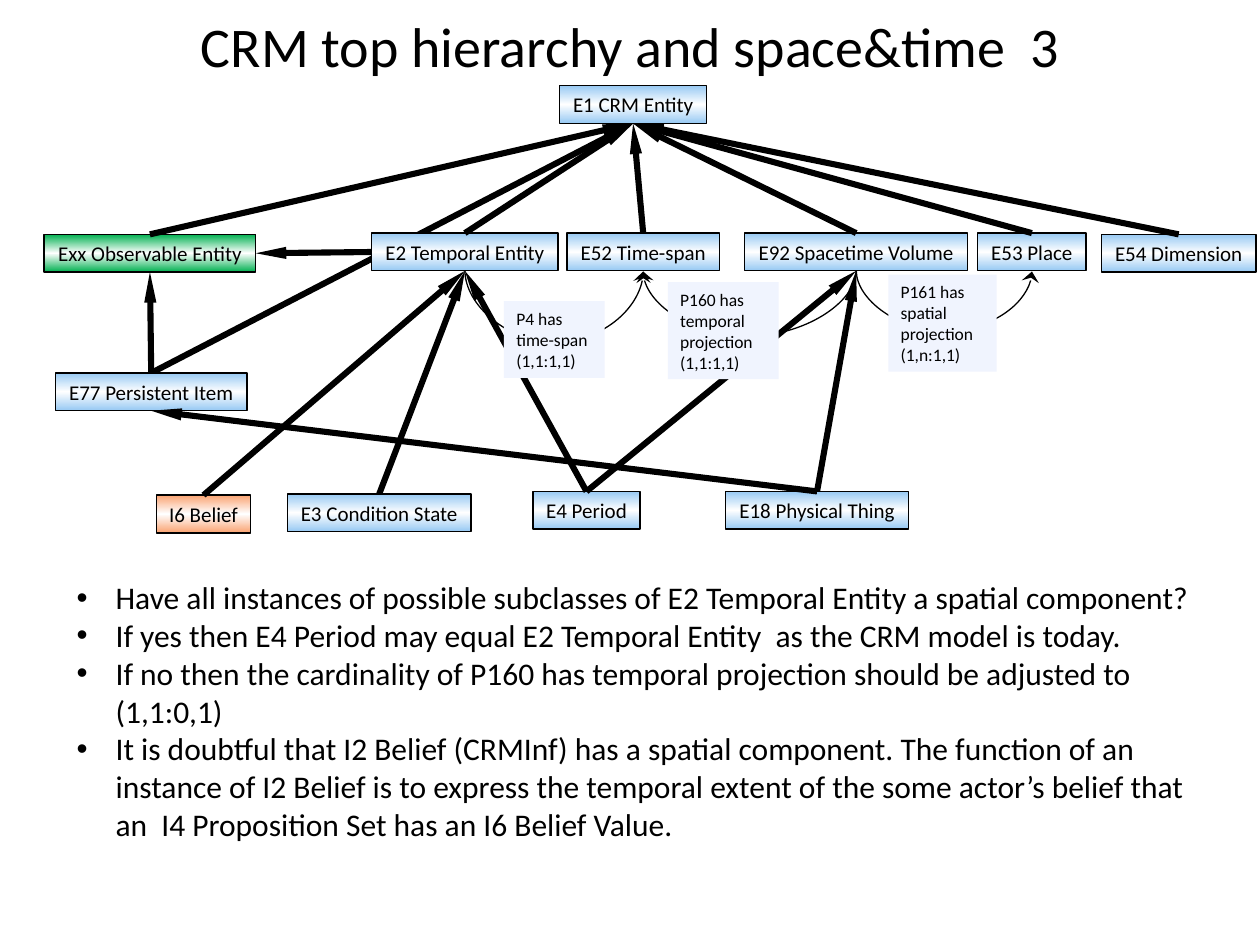
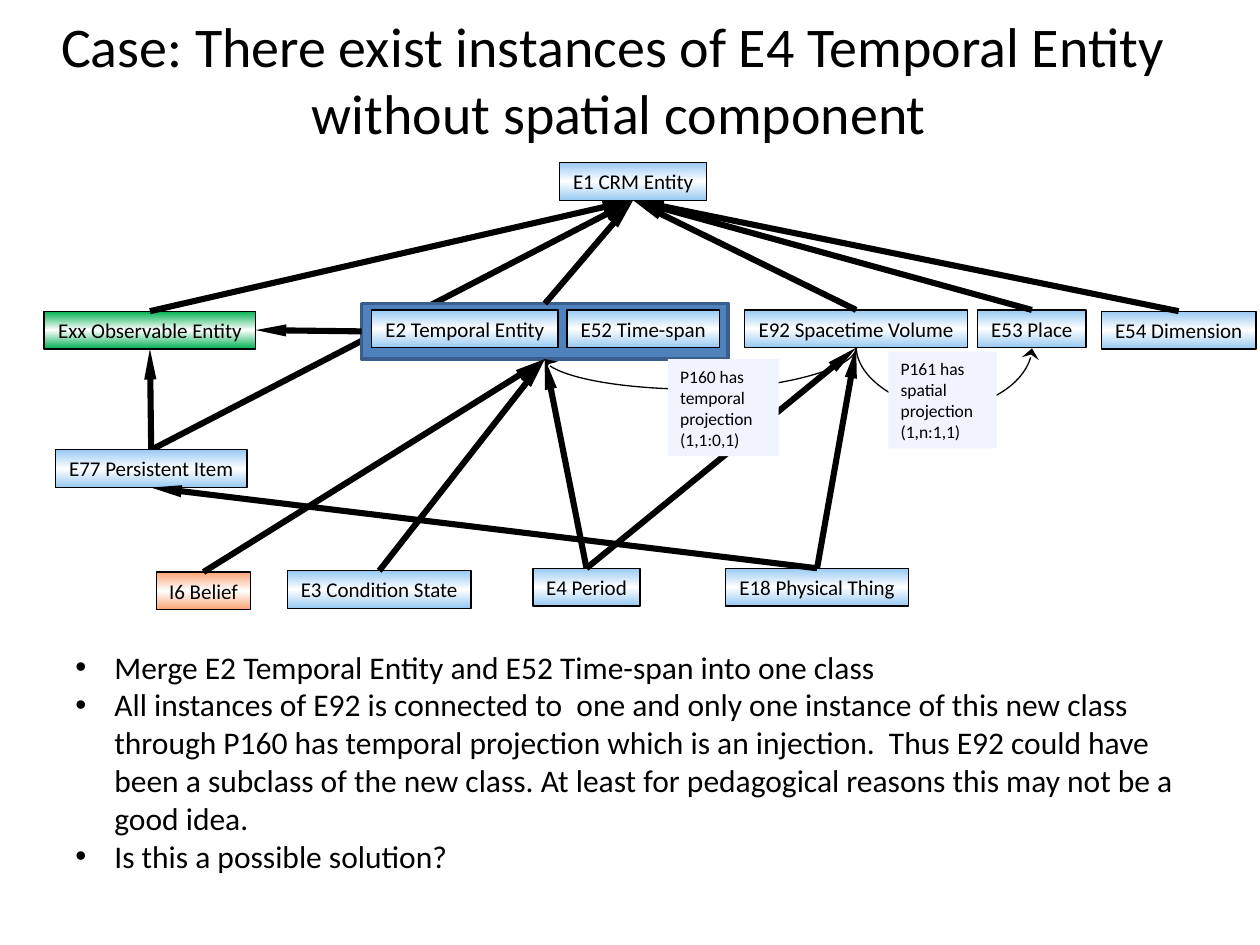
from copy import deepcopy
from dataclasses import dataclass

from pptx import Presentation
from pptx import util as u
from pptx.dml.color import RGBColor
from pptx.enum import shapes, text
from pptx.oxml.ns import qn
from lxml import etree


@dataclass(frozen=True)
class Theme:
    """Colours, font and type sizes of the deck."""
    font: str = "Calibri"
    ink: str = "000000"
    white: str = "FFFFFF"
    blue: str = "97C9F3"
    green: str = "00B050"
    orange: str = "FAA372"
    note: str = "F0F4FE"
    merged: str = "4F81BD"
    merged_edge: str = "3A5F8C"
    title: int = 32
    body: int = 18
    node: int = 12
    small: int = 10
    thin: float = 0.75
    thick: float = 3.5


T = Theme()
TOP, LEFT, BOTTOM, RIGHT = range(4)
NODE_H = 30
NODES = {
    "E54": ("E54 Dimension", 839, 118, 123, T.blue),
    "Exx": ("Exx Observable Entity", 0, 118, 168, T.green),
    "E1": ("E1 CRM Entity", 409, 0, 117, T.blue),
    "I6": ("I6 Belief", 89, 325, 75, T.orange),
    "E18": ("E18 Physical Thing", 541, 322, 145, T.blue),
    "E77": ("E77 Persistent Item", 9, 228, 152, T.blue),
    "E92": ("E92 Spacetime Volume", 556, 117, 177, T.blue),
    "E2": ("E2 Temporal Entity", 260, 117, 148, T.blue),
    "E4": ("E4 Period", 388, 322, 85, T.blue),
    "E52": ("E52 Time-span", 415, 117, 121, T.blue),
    "E53": ("E53 Place", 741, 117, 86, T.blue),
    "E3": ("E3 Condition State", 193, 324, 146, T.blue),
}
SUBCLASSES = {
    "E1": ("Exx", "E2", "E92", "E53", "E54"),
    "E2": ("I6", "E3", "E4"),
    "E92": ("E4", "E18"),
    "E77": ("E18",),
    "Exx": ("E77",),
}


def px(n):
    """Turn px, 100 to the inch, into EMU."""
    return u.Emu(n * 9144)


def rgb(hex_value):
    """Turn a hex string into a colour."""
    return RGBColor.from_string(hex_value)


def put_text(sp, lines, size=T.body, align=text.PP_ALIGN.LEFT, wrap=True,
             anchor=text.MSO_ANCHOR.TOP, bullet=False):
    """Write one paragraph per line into a shape."""
    tf = sp.text_frame
    tf.word_wrap = wrap
    tf.auto_size = text.MSO_AUTO_SIZE.SHAPE_TO_FIT_TEXT
    tf.vertical_anchor = anchor
    for i, line in enumerate(lines):
        p = tf.add_paragraph() if i else tf.paragraphs[0]
        p.alignment = align
        r = p.add_run()
        r.text = line
        r.font.name, r.font.size = T.font, u.Pt(size)
        r.font.color.rgb = rgb(T.ink)
        if bullet:
            pPr = p._p.get_or_add_pPr()
            pPr.set("marL", str(px(31)))
            pPr.set("indent", str(px(-31)))
            etree.SubElement(pPr, qn("a:buFont"), typeface="Arial")
            etree.SubElement(pPr, qn("a:buChar"), char="•")


def add_rect(s, x, y, w, h, fill, edge=None, width=T.thin):
    """Add a flat rectangle with an optional outline."""
    sp = s.shapes.add_shape(shapes.MSO_SHAPE.RECTANGLE, px(x), px(y), px(w), px(h))
    sp.shadow.inherit = False
    sp.fill.solid()
    sp.fill.fore_color.rgb = rgb(fill)
    if edge:
        sp.line.color.rgb, sp.line.width = rgb(edge), u.Pt(width)
    else:
        sp.line.fill.background()
    return sp


def add_node(s, x, y, w, label, color):
    """Add a class box shaded from its colour to white and back."""
    sp = add_rect(s, x, y, w, NODE_H, color, T.ink)
    sp.fill.gradient()
    sp.fill.gradient_angle = 90
    stops = sp._element.spPr.find(".//" + qn("a:gsLst"))
    stops.append(deepcopy(stops[0]))
    for stop, shade, place in zip(sp.fill.gradient_stops,
                                  (color, T.white, color), (0, 0.5, 1)):
        stop.color.rgb, stop.position = rgb(shade), place
    put_text(sp, [label], size=T.node, align=text.PP_ALIGN.CENTER, wrap=False)
    return sp


def add_arrow(s, kind, src, src_site, dst, dst_site, width, head):
    """Add an arrow glued to two shapes."""
    cxn = s.shapes.add_connector(kind, 0, 0, 0, 0)
    cxn.begin_connect(src, src_site)
    cxn.end_connect(dst, dst_site)
    cxn.line.color.rgb, cxn.line.width = rgb(T.ink), u.Pt(width)
    spPr = cxn._element.spPr
    style, w, length = head
    etree.SubElement(spPr.find(qn("a:ln")), qn("a:tailEnd"),
                     type=style, w=w, len=length)
    etree.SubElement(spPr, qn("a:effectLst"))
    return cxn


def add_link(s, src, dst, src_site=TOP, dst_site=BOTTOM):
    """Add a thick straight subclass arrow."""
    return add_arrow(s, shapes.MSO_CONNECTOR.STRAIGHT, src, src_site, dst, dst_site,
                     T.thick, ("triangle", "sm", "lg"))


def add_curve(s, src, dst, drop):
    """Add a thin property arrow that hangs below two boxes by drop px."""
    cxn = add_arrow(s, shapes.MSO_CONNECTOR.CURVE, src, BOTTOM, dst, BOTTOM,
                    T.thin, ("stealth", "lg", "med"))
    x1, y1, x2, y2 = cxn.begin_x, cxn.begin_y, cxn.end_x, cxn.end_y
    rise, span = max(y2 - y1, px(1)), abs(x2 - x1)
    spPr = cxn._element.spPr
    xfrm = spPr.find(qn("a:xfrm"))
    for flip in ("flipH", "flipV"):
        xfrm.attrib.pop(flip, None)
    if x2 > x1:
        xfrm.set("flipH", "1")
    xfrm.set("rot", str((270 if x2 > x1 else 90) * 60000))
    cxn.left, cxn.top = (x1 + x2 - rise) // 2, (y1 + y2 - span) // 2
    cxn.width, cxn.height = rise, span
    guides = spPr.find(qn("a:prstGeom")).find(qn("a:avLst"))
    etree.SubElement(guides, qn("a:gd"), name="adj1",
                     fmla=f"val {round(px(drop) / rise * 100000)}")


def add_note(s, x, y, w, h, lines):
    """Add a pale property label."""
    put_text(add_rect(s, x, y, w, h, T.note), lines, size=T.small,
             anchor=text.MSO_ANCHOR.MIDDLE)


def add_diagram(s, left, top, merge, cardinality):
    """Draw the class hierarchy; merge joins E2 and E52 in one box."""
    if merge:
        merged = add_rect(s, left + 252, top + 112, 291, 44, T.merged,
                          T.merged_edge, 2)
    ends = {key: add_node(s, left + x, top + y, w, label, color)
            for key, (label, x, y, w, color) in NODES.items()}
    if merge:
        ends["E2"] = ends["E52"] = merged

    for parent, children in SUBCLASSES.items():
        for child in children:
            add_link(s, ends[child], ends[parent])
    add_link(s, ends["E2"], ends["Exx"], LEFT, RIGHT)
    back = add_link(s, ends["E77"], ends["E1"])._element
    back.getparent().insert(2, back)

    add_curve(s, ends["E92"], ends["E52"], 33 if merge else 53)
    add_curve(s, ends["E92"], ends["E53"], 49)
    if not merge:
        add_link(s, ends["E52"], ends["E1"])
        add_curve(s, ends["E2"], ends["E52"], 58)
        add_note(s, left + 365, top + 171, 80, 61,
                 ["P4 has", "time-span", "(1,1:1,1)"])
    add_note(s, left + 670, top + 150, 86, 77,
             ["P161 has", "spatial projection", "(1,n:1,1)"])
    add_note(s, left + 495, top + 156, 88, 77,
             ["P160 has", "temporal projection", cardinality])


def add_text(s, box, lines, **fmt):
    """Add a text box with formatted lines."""
    put_text(s.shapes.add_textbox(*map(px, box)), lines, **fmt)


def add_slide(prs, title, title_box, diagram_top, bullets, bullet_box,
              cardinality, merge=False):
    """Add a slide with title, class diagram and bullets."""
    s = prs.slides.add_slide(prs.slide_layouts[6])
    add_diagram(s, 35, diagram_top, merge, cardinality)
    add_text(s, title_box, title, size=T.title, align=text.PP_ALIGN.CENTER, wrap=False)
    add_text(s, bullet_box, bullets, bullet=True)


def main():
    """Build and save the deck."""
    prs = Presentation()
    prs.slide_width, prs.slide_height = px(1000), px(750)
    add_slide(
        prs, ["CRM top hierarchy and space&time  3"], (146, 4, 709, 64), 68,
        ["Have all instances of possible subclasses of E2 Temporal Entity a spatial "
         "component?",
         "If yes then E4 Period may equal E2 Temporal Entity  as the CRM model is today.",
         "If no then the cardinality of P160 has temporal projection should be adjusted "
         "to (1,1:0,1)",
         "It is doubtful that I2 Belief (CRMInf) has a spatial component. The function "
         "of an instance of I2 Belief is to express the temporal extent of the some "
         "actor’s belief that an  I4 Proposition Set has an I6 Belief Value."],
        (51, 454, 906, 222), "(1,1:1,1)")
    add_slide(
        prs, ["Case: There exist instances of E4 Temporal Entity ",
              "without spatial component"], (34, 4, 915, 118), 129,
        ["Merge E2 Temporal Entity and E52 Time-span into one class",
         "All instances of E92 is connected to  one and only one instance of this new "
         "class through P160 has temporal projection which is an injection.  Thus E92 "
         "could have been a subclass of the new class. At least for pedagogical reasons "
         "this may not be a good idea.",
         "Is this a possible solution?"],
        (50, 509, 906, 192), "(1,1:0,1)", merge=True)
    prs.save("out.pptx")


if __name__ == "__main__":
    main()
